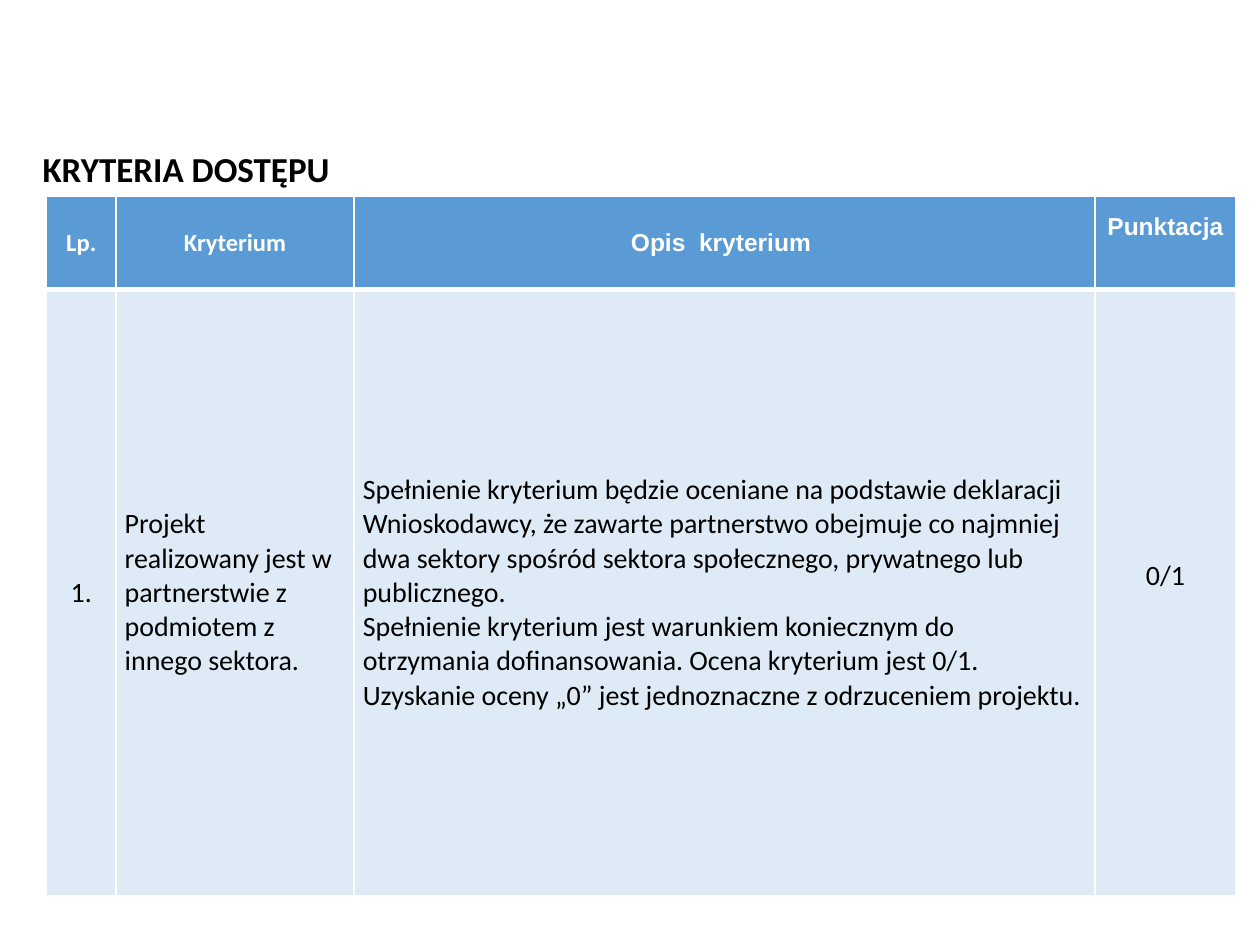
from lxml import etree
from pptx import Presentation
from pptx.dml.color import RGBColor
from pptx.enum.text import MSO_ANCHOR, MSO_AUTO_SIZE, PP_ALIGN
from pptx.oxml.ns import qn
from pptx.util import Inches, Pt

MIDDLE = MSO_ANCHOR.MIDDLE
CENTER, LEFT = PP_ALIGN.CENTER, PP_ALIGN.LEFT
FIT_SHAPE = MSO_AUTO_SIZE.SHAPE_TO_FIT_TEXT
COLORS = {"header": "5B9BD5", "body": "DEEBF7", "white": "FFFFFF", "black": "000000"}


def style_para(para, font_name, size, color, bold, align):
    para.alignment = align
    para.font.name = font_name
    para.font.size = Pt(size)
    para.font.bold = bold
    para.font.color.rgb = RGBColor.from_string(COLORS[color])


def add_border(cell, side, points):
    props = cell._tc.get_or_add_tcPr()
    line = etree.SubElement(props, qn(f"a:{side}"), w=str(Pt(points)))
    fill = etree.SubElement(line, qn("a:solidFill"))
    etree.SubElement(fill, qn("a:srgbClr"), val=COLORS["white"])


deck = Presentation()
deck.slide_width, deck.slide_height = Inches(10), Inches(7.5)
page = deck.slides.add_slide(deck.slide_layouts[6])

column_widths = [0.55, 1.89, 5.88, 1.12]
row_heights = [0.74, 4.81]
cell_texts = [
    ["Lp.", "Kryterium", "Opis  kryterium ", "Punktacja"],
    [
        "1.",
        "Projekt realizowany jest w partnerstwie z podmiotem z innego sektora.",
        "Spełnienie kryterium będzie oceniane na podstawie deklaracji Wnioskodawcy, "
        "że zawarte partnerstwo obejmuje co najmniej dwa sektory spośród sektora "
        "społecznego, prywatnego lub publicznego.\n"
        "Spełnienie kryterium jest warunkiem koniecznym do otrzymania dofinansowania. "
        "Ocena kryterium jest 0/1. Uzyskanie oceny „0” jest jednoznaczne z odrzuceniem "
        "projektu.",
        "0/1",
    ],
]
header_fonts = ["Calibri", "Calibri", "Arial", "Arial"]
body_aligns = [CENTER, LEFT, LEFT, CENTER]

table = page.shapes.add_table(
    len(row_heights), len(column_widths), Inches(0.37), Inches(1.56),
    Inches(sum(column_widths)), Inches(sum(row_heights)),
).table
for column, width in zip(table.columns, column_widths):
    column.width = Inches(width)
for row, height in zip(table.rows, row_heights):
    row.height = Inches(height)

for row_index, texts in enumerate(cell_texts):
    is_header = row_index == 0
    for column_index, text in enumerate(texts):
        cell = table.cell(row_index, column_index)
        cell.text = text
        cell.vertical_anchor = MIDDLE
        cell.margin_left = cell.margin_right = Inches(0.07)
        cell.margin_top = 0
        cell.margin_bottom = Inches(0.26) if column_index == 3 else 0
        for para in cell.text_frame.paragraphs:
            if is_header:
                style_para(para, header_fonts[column_index], 14, "white", True, CENTER)
            else:
                style_para(para, "Calibri", 16, "black", False, body_aligns[column_index])
        for side, points in [
            ("lnL", 1), ("lnR", 1),
            ("lnT", 1 if is_header else 3), ("lnB", 3 if is_header else 1),
        ]:
            add_border(cell, side, points)
        cell.fill.solid()
        cell.fill.fore_color.rgb = RGBColor.from_string(
            COLORS["header" if is_header else "body"]
        )

title_box = page.shapes.add_textbox(Inches(0.24), Inches(1.12), Inches(3.7), Inches(0.44))
frame = title_box.text_frame
frame.word_wrap = True
frame.auto_size = FIT_SHAPE
frame.vertical_anchor = MIDDLE
frame.text = "KRYTERIA DOSTĘPU"
style_para(frame.paragraphs[0], "Calibri", 20, "black", True, LEFT)

deck.save("out.pptx")
